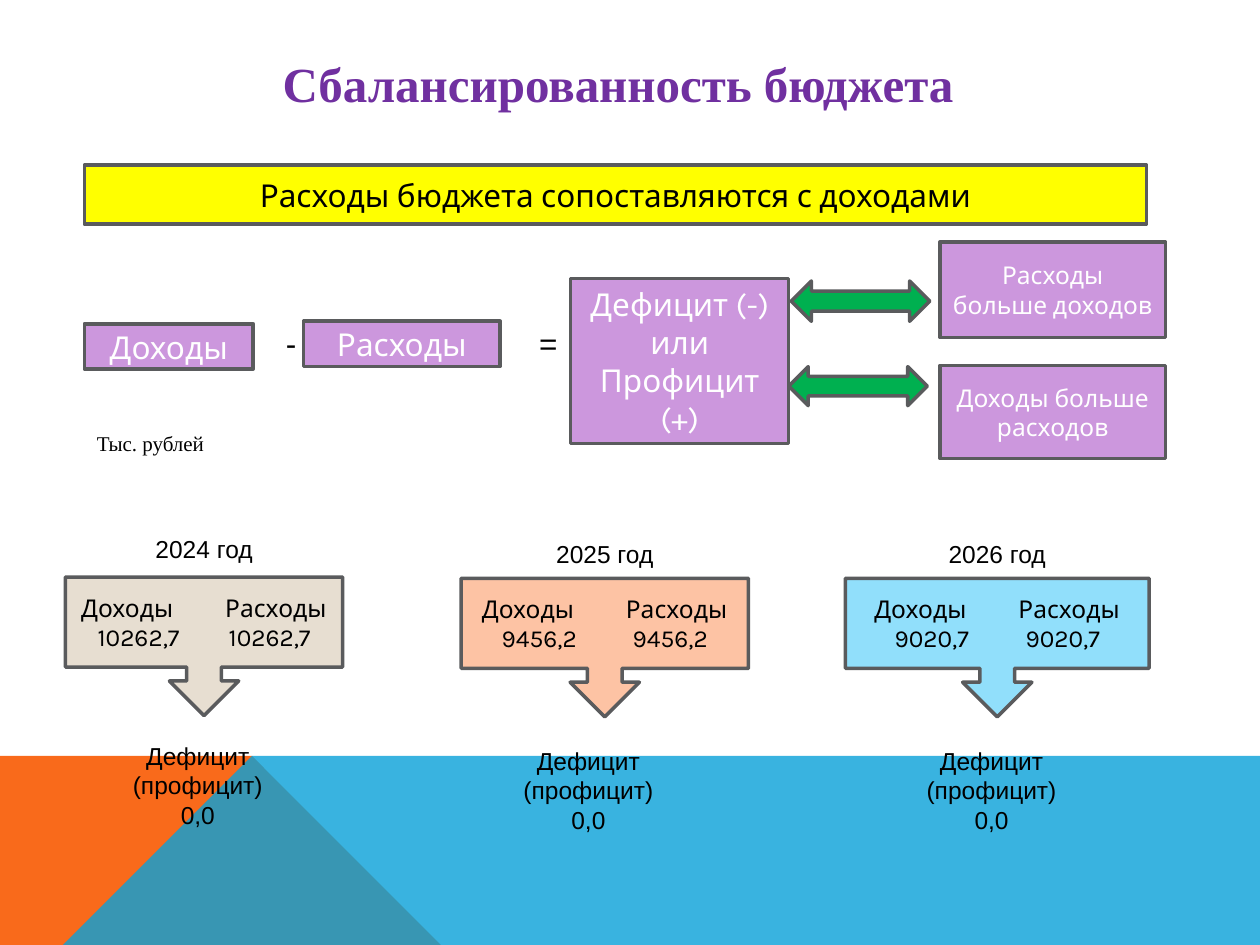
from pptx import Presentation
from pptx.dml.color import RGBColor
from pptx.enum.shapes import MSO_SHAPE
from pptx.enum.text import MSO_ANCHOR, PP_ALIGN
from pptx.oxml.ns import qn
from pptx.util import Inches, Pt
from lxml import etree

RECT, PROC = MSO_SHAPE.RECTANGLE, MSO_SHAPE.FLOWCHART_PROCESS
ARROW, CALL = MSO_SHAPE.LEFT_RIGHT_ARROW, MSO_SHAPE.DOWN_ARROW_CALLOUT
MID, TOP = MSO_ANCHOR.MIDDLE, MSO_ANCHOR.TOP
LEFT, CENTER = PP_ALIGN.LEFT, PP_ALIGN.CENTER

WIDTH, HEIGHT = 10, 7.5
SANS, SERIF, BODY = "Arial", "Times New Roman", "Karla"
BLACK, WHITE, EDGE = "000000", "FFFFFF", "5A5B5D"
LILAC, GREEN, YELLOW = "CC97DD", "00B050", "FFFF00"

TITLE = "Сбалансированность бюджета"
# points, colour, opacity in percent
BANDS = [
    ([(0, 7.5), (0, 5.52), (2.23, 5.52), (3.91, 7.5)], "F96A1B", 100),
    ([(0, 7.5), (2.23, 5.52), (10, 5.52), (10, 7.5)], "08A1D9", 80),
]
# kind, place, fill, text, size, text colour
BOXES = [
    (RECT, (0.67, 1.31, 8.43, 0.47), YELLOW,
     "Расходы бюджета сопоставляются с доходами", 18, BLACK),
    (RECT, (0.67, 2.57, 1.34, 0.36), LILAC, "Доходы", 18, WHITE),
    (RECT, (2.41, 2.55, 1.56, 0.36), LILAC, "Расходы", 18, WHITE),
    (PROC, (4.53, 2.21, 1.73, 1.31), LILAC,
     "Дефицит (-) или Профицит (+)", 18, WHITE),
    (PROC, (7.46, 1.92, 1.79, 0.76), LILAC, "Расходы больше доходов", 14, WHITE),
    (PROC, (7.46, 2.9, 1.79, 0.74), LILAC, "Доходы больше расходов", 14, WHITE),
]
ARROWS = [(6.28, 2.23, 1.1, 0.32), (6.26, 2.91, 1.1, 0.31)]
# place, text, size, font, wrap
LABELS = [
    ((2.17, 2.52, 0.29, 0.4), "-", 18, SANS, False),
    ((4.18, 2.52, 0.25, 0.4), "=", 18, SANS, True),
    ((0.67, 3.37, 1.06, 0.3), "Тыс. рублей", 12, SERIF, False),
]
# year, amount, fill, callout place, label place, middle of the result lines
YEARS = [
    ("2024 год", "10262,7", "E7DED1", (0.52, 4.58, 2.2, 1.1),
     (0.25, 4.19, 2.39, 2.46), 1.57),
    ("2025 год", "9456,2", "FDC3A4", (3.66, 4.59, 2.28, 1.1),
     (3.18, 4.23, 2.52, 2.46), 4.67),
    ("2026 год", "9020,7", "91DFFB", (6.71, 4.59, 2.41, 1.1),
     (6.26, 4.23, 2.41, 2.46), 7.87),
]
HEADS = ("Доходы", "Расходы")
RESULT = ["Дефицит", "(профицит)", "0,0"]
HEAD_TABS, SUM_TABS = (-0.61, 0.57), (-0.52, 0.52)  # from the callout's middle


def rgb(code):
    return RGBColor.from_string(code)


def inch(place):
    return [Inches(v) for v in place]


def write(frame, lines, size, font, color, align=CENTER, anchor=TOP):
    frame.text = "\n".join(lines)
    frame.vertical_anchor = anchor
    for para in frame.paragraphs:
        para.alignment = align
        para.font.size, para.font.name = Pt(size), font
        para.font.color.rgb = rgb(color)


def draw(kind, place, fill):
    shape = slide.shapes.add_shape(kind, *inch(place))
    shape.shadow.inherit = False
    shape.fill.solid()
    shape.fill.fore_color.rgb = rgb(fill)
    shape.line.color.rgb, shape.line.width = rgb(EDGE), Pt(2)
    return shape


def label(place, lines, size, font, wrap=True, align=LEFT):
    frame = slide.shapes.add_textbox(*inch(place)).text_frame
    frame.word_wrap = wrap
    write(frame, lines, size, font, BLACK, align)
    return frame


def band(points, color, alpha):
    pen = slide.shapes.build_freeform(*points[0], scale=Inches(1))
    pen.add_line_segments(points[1:], close=True)
    shape = pen.convert_to_shape()
    shape.shadow.inherit = False
    shape.line.fill.background()
    shape.fill.solid()
    shape.fill.fore_color.rgb = rgb(color)
    if alpha < 100:
        node = shape.fill._xPr.find(".//" + qn("a:srgbClr"))
        etree.SubElement(node, qn("a:alpha")).set("val", str(alpha * 1000))


def set_tabs(para, stops):
    """Add centred tab stops, in inches from the text's left edge."""
    tabs = etree.SubElement(para._p.get_or_add_pPr(), qn("a:tabLst"))
    for stop in stops:
        tab = etree.SubElement(tabs, qn("a:tab"))
        tab.set("pos", str(Inches(stop)))
        tab.set("algn", "ctr")
    # the schema wants tab stops ahead of the run defaults
    tabs.getparent().insert(0, tabs)


def center_on(para, place, mid):
    """Indent a centred line so that its middle falls on mid."""
    shift = 2 * (mid - place[0] - place[2] / 2)
    para._p.get_or_add_pPr().set("marL", str(Inches(shift)))


def callout(amount, fill, place):
    frame = draw(CALL, place, fill).text_frame
    frame.margin_left = frame.margin_right = 0
    rows = [HEADS, (amount, amount)]
    lines = ["".join("\t" + word for word in row) for row in rows]
    write(frame, lines, 14, BODY, BLACK, LEFT, MID)
    for para, tabs in zip(frame.paragraphs, (HEAD_TABS, SUM_TABS)):
        set_tabs(para, [place[2] / 2 + tab for tab in tabs])


def caption(year, place, year_mid, mid):
    paras = label(place, [year] + RESULT, 14, SANS, align=CENTER).paragraphs
    for para in paras:
        para.line_spacing = Pt(16.9)
        center_on(para, place, mid)
    center_on(paras[0], place, year_mid)
    paras[1].space_before = Pt(101)


deck = Presentation()
deck.slide_width, deck.slide_height = Inches(WIDTH), Inches(HEIGHT)
slide = deck.slides.add_slide(deck.slide_layouts[5])

for part in BANDS:
    band(*part)

title = slide.shapes.title
title.left, title.top, title.width, title.height = inch((1.3, 0.36, 7.21, 0.59))
write(title.text_frame, [TITLE], 28, SERIF, "7030A0", anchor=MID)
title.text_frame.paragraphs[0].font.bold = True

for kind, place, fill, text, size, color in BOXES:
    write(draw(kind, place, fill).text_frame, [text], size, BODY, color, anchor=MID)
for place in ARROWS:
    draw(ARROW, place, GREEN)
for place, text, size, font, wrap in LABELS:
    label(place, [text], size, font, wrap)
for year, amount, fill, place, area, mid in YEARS:
    caption(year, area, place[0] + place[2] / 2, mid)
    callout(amount, fill, place)

deck.save("out.pptx")
